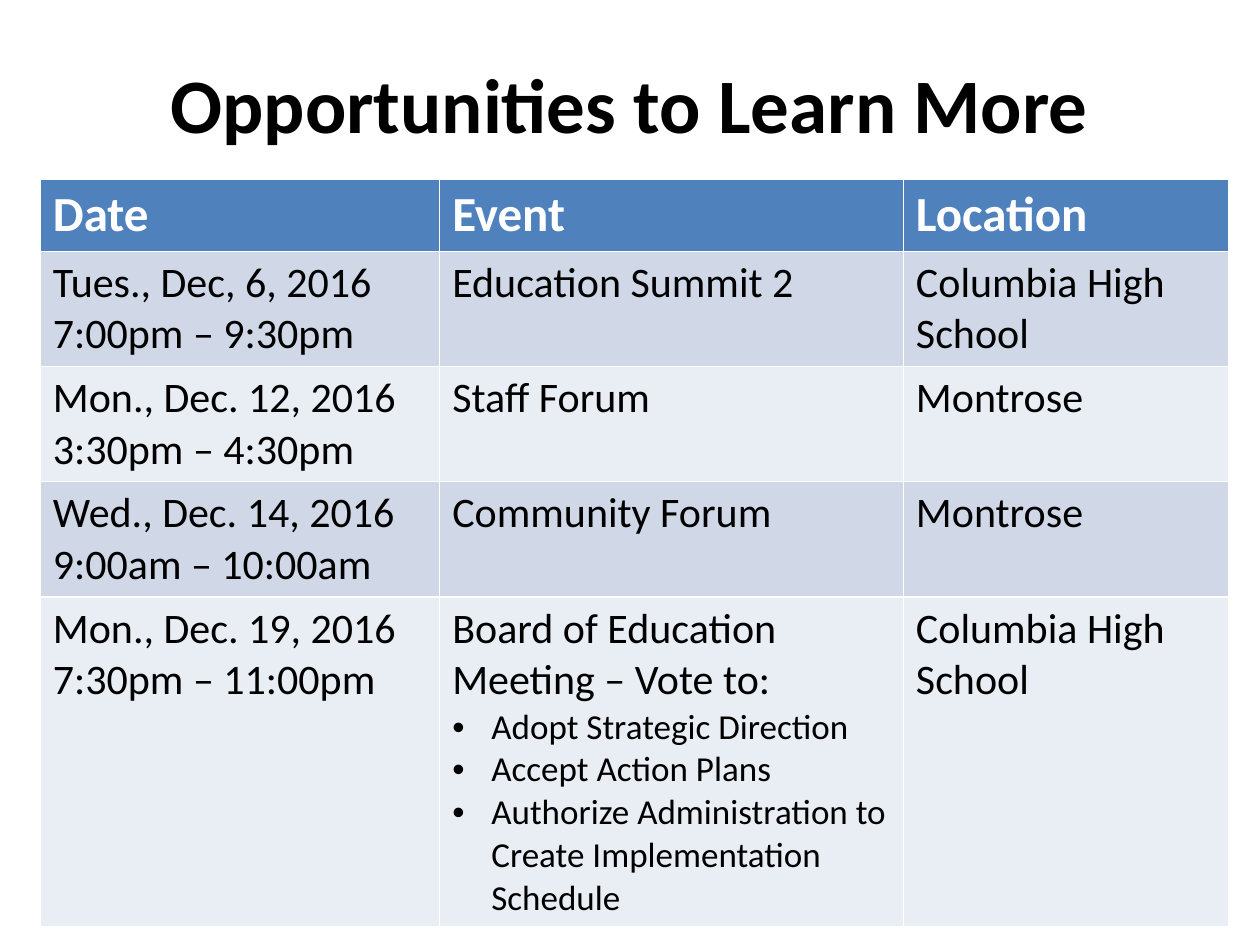
from lxml import etree
from pptx import Presentation
from pptx.dml.color import RGBColor
from pptx.enum.text import MSO_ANCHOR, PP_ALIGN
from pptx.oxml.ns import qn
from pptx.util import Inches, Pt

CENTER = PP_ALIGN.CENTER
MIDDLE = MSO_ANCHOR.MIDDLE
TITLE_ONLY = 5
BULLET_INDENT = Inches(0.31)


def write(para, text, size=24, color="000000", bold=False, bullet=False):
    if bullet:
        properties = para._p.get_or_add_pPr()
        properties.set("marL", str(BULLET_INDENT))
        properties.set("indent", str(-BULLET_INDENT))
        etree.SubElement(properties, qn("a:buFont")).set("typeface", "Arial")
        etree.SubElement(properties, qn("a:buChar")).set("char", "•")
    span = para.add_run()
    span.text = text
    span.font.name = "Calibri"
    span.font.size = Pt(size)
    span.font.bold = bold
    span.font.color.rgb = RGBColor.from_string(color)


deck = Presentation()
deck.slide_width = Inches(10)
deck.slide_height = Inches(7.5)
page = deck.slides.add_slide(deck.slide_layouts[TITLE_ONLY])

title = page.shapes.title
title.left, title.top = Inches(0.5), Inches(0.3)
title.width, title.height = Inches(9), Inches(1.03)
title.text_frame.vertical_anchor = MIDDLE
title_para = title.text_frame.paragraphs[0]
title_para.alignment = CENTER
write(title_para, "Opportunities to Learn More", size=44, bold=True)

headings = ["Date", "Event", "Location"]
events = [
    (["Tues., Dec, 6, 2016", "7:00pm – 9:30pm"], ["Education Summit 2"], ["Columbia High School"]),
    (["Mon., Dec. 12, 2016", "3:30pm – 4:30pm"], ["Staff Forum"], ["Montrose"]),
    (["Wed., Dec. 14, 2016", "9:00am – 10:00am"], ["Community Forum"], ["Montrose"]),
    (
        ["Mon., Dec. 19, 2016", "7:30pm – 11:00pm"],
        ["Board of Education Meeting – Vote to:"],
        ["Columbia High School"],
    ),
]
votes = [
    "Adopt Strategic Direction",
    "Accept Action Plans",
    "Authorize Administration to Create Implementation Schedule",
]
column_widths = [3.17, 3.68, 2.58]
row_heights = [0.56, 0.91, 0.91, 0.91, 2.54]
band_colors = ["D0D8E8", "E9EDF4"]

schedule = page.shapes.add_table(
    len(row_heights), len(column_widths),
    Inches(0.32), Inches(1.42), Inches(sum(column_widths)), Inches(sum(row_heights)),
).table
for column, width in zip(schedule.columns, column_widths):
    column.width = Inches(width)
for row, height in zip(schedule.rows, row_heights):
    row.height = Inches(height)

for column_index, heading in enumerate(headings):
    cell = schedule.cell(0, column_index)
    cell.fill.solid()
    cell.fill.fore_color.rgb = RGBColor.from_string("4F81BD")
    write(cell.text_frame.paragraphs[0], heading, size=28, color="FFFFFF", bold=True)

for event_index, event in enumerate(events):
    for column_index, lines in enumerate(event):
        cell = schedule.cell(event_index + 1, column_index)
        cell.fill.solid()
        cell.fill.fore_color.rgb = RGBColor.from_string(band_colors[event_index % 2])
        frame = cell.text_frame
        write(frame.paragraphs[0], lines[0])
        for line in lines[1:]:
            write(frame.add_paragraph(), line)

board_cell = schedule.cell(len(events), headings.index("Event"))
for vote in votes:
    write(board_cell.text_frame.add_paragraph(), vote, size=20, bullet=True)

deck.save("out.pptx")
